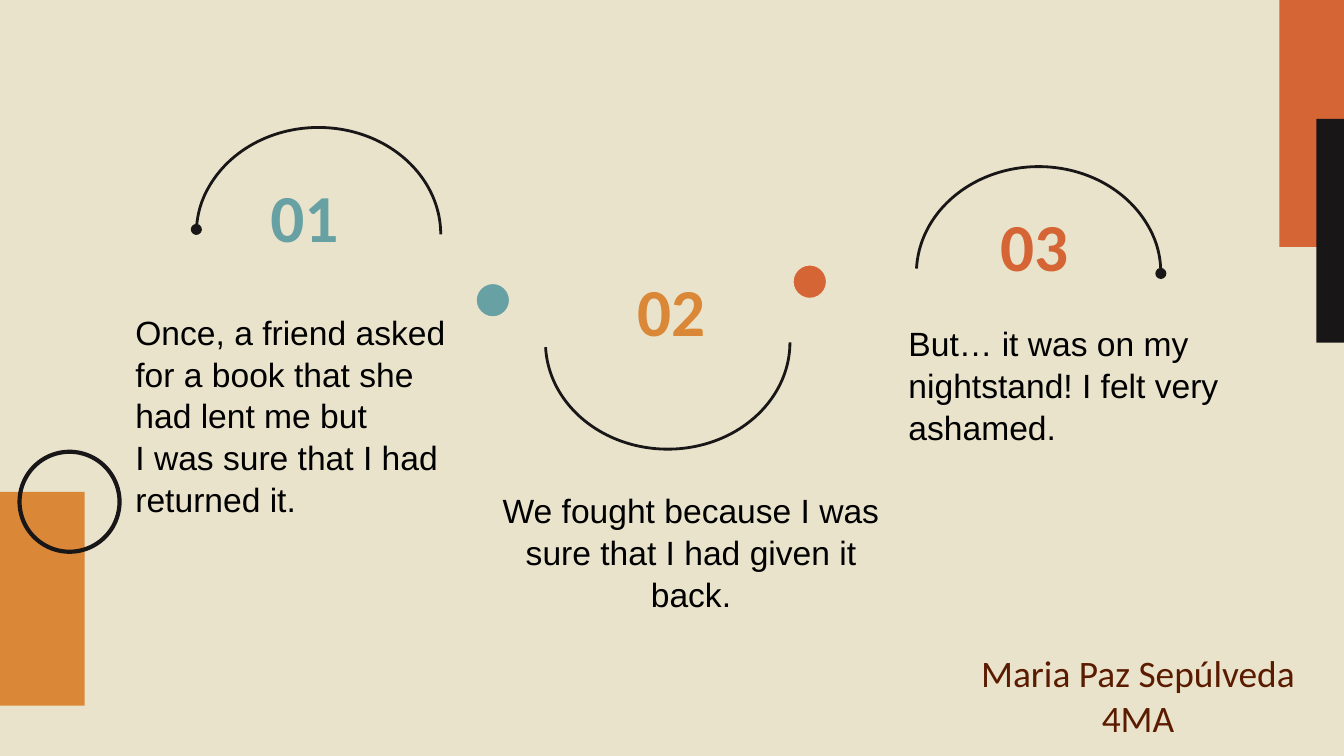
from dataclasses import dataclass

from pptx import Presentation
from pptx.dml.color import RGBColor as RGB
from pptx.enum.shapes import MSO_SHAPE as Kind
from pptx.enum.text import MSO_ANCHOR as Anchor, PP_ALIGN as Align
from pptx.oxml.ns import qn
from pptx.util import Cm, Pt
from lxml.etree import SubElement


@dataclass(frozen=True)
class Theme:
    sand: str = "E9E3CB"
    ink: str = "191617"
    teal: str = "68A1A4"
    amber: str = "DA8737"
    rust: str = "D56534"
    brown: str = "5A1B00"
    black: str = "000000"
    head: str = "Calibri"
    body: str = "Arial"
    num_pt: int = 36
    name_pt: int = 20
    body_pt: int = 18


T = Theme()


def rgb(code):
    return RGB.from_string(code)


def shape(slide, kind, box, fill=None, line=None, width=1.5):
    item = slide.shapes.add_shape(kind, *map(Cm, box))
    item.shadow.inherit = False
    if fill:
        item.fill.solid()
        item.fill.fore_color.rgb = rgb(fill)
    else:
        item.fill.background()
    if line:
        item.line.color.rgb = rgb(line)
        item.line.width = Pt(width)
    else:
        item.line.fill.background()
    return item


def text(slide, box, words, size, color, face=T.body, bold=False,
         align=Align.LEFT, anchor=Anchor.TOP, space=1.0):
    frame = slide.shapes.add_textbox(*map(Cm, box)).text_frame
    frame.word_wrap = True
    frame.vertical_anchor = anchor
    frame.margin_left = frame.margin_right = Cm(0.25)
    frame.margin_top = frame.margin_bottom = Cm(0.25)
    frame.text = words
    for para in frame.paragraphs:
        para.alignment = align
        para.line_spacing = space
        font = para.font
        font.name, font.size, font.bold = face, Pt(size), bold
        font.color.rgb = rgb(color)


def arc(slide, box, end=None, down=False):
    """Half ring; end is the tag of the line end that carries a dot."""
    item = shape(slide, Kind.ARC, box, line=T.ink)
    item.adjustments[0] = 109.38
    item.adjustments[1] = 0
    if down:
        item.rotation = 180
        item.element.spPr.get_or_add_xfrm().set("flipH", "1")
    if end:
        SubElement(item.line._get_or_add_ln(), qn(end), type="oval")


def corner(slide, x, y):
    """Two overlapping bars at the top right."""
    shape(slide, Kind.RECTANGLE, (x, y, 1.24, 4.67), T.rust)
    shape(slide, Kind.RECTANGLE, (x + 0.7, y + 2.25, 0.56, 4.23), T.ink)


def edge(slide, x, y):
    """Block and ring at the lower left."""
    shape(slide, Kind.RECTANGLE, (x, y, 2.29, 4.04), T.amber)
    shape(slide, Kind.OVAL, (x + 1.06, y - 0.76, 1.89, 1.89),
          line=T.ink, width=2.25)


def step(slide, x, y, num, color, shift, note, words,
         align=Align.LEFT, **ring):
    """Arc at x, y with its number and note placed from that corner."""
    arc(slide, (x, y, 4.62, 4.04), **ring)
    dx, dy = shift
    text(slide, (x + dx, y + dy, 2.97, 1.12), num, T.num_pt, color, T.head,
         True, Align.CENTER, Anchor.MIDDLE, 1.15)
    dx, dy, w, h = note
    text(slide, (x + dx, y + dy, w, h), words, T.body_pt, T.black,
         align=align, space=1.04)


def dot(slide, x, y, color):
    shape(slide, Kind.OVAL, (x, y, 0.69, 0.69), color, T.sand, 2.25)


def main():
    deck = Presentation()
    deck.slide_width, deck.slide_height = Cm(25.4), Cm(14.29)
    slide = deck.slides.add_slide(deck.slide_layouts[6])
    back = slide.background.fill
    back.solid()
    back.fore_color.rgb = rgb(T.sand)

    # Decoration
    corner(slide, 24.18, 0)
    edge(slide, -0.69, 9.3)

    # Story steps
    step(slide, 3.71, 2.41, "01", T.teal, (0.56, 0.99),
         (-1.4, 3.2, 6.65, 4.65),
         "Once, a friend asked for a book that she had lent me but\n"
         "I was sure that I had returned it.", end="a:headEnd")
    step(slide, 10.31, 4.45, "02", T.amber, (0.89, 0.73),
         (-1.06, 4.54, 7.62, 3.43),
         "We fought because I was sure that I had given it back.",
         Align.CENTER, down=True)
    step(slide, 17.32, 3.15, "03", T.rust, (0.74, 0.81),
         (-0.4, 2.67, 6.65, 2.49),
         "But… it was on my nightstand! I felt very ashamed.",
         end="a:tailEnd")

    # Dots between steps
    dot(slide, 8.97, 5.33, T.teal)
    dot(slide, 14.96, 4.98, T.rust)

    # Author
    text(slide, (17.32, 12.04, 8.38, 2.24), "Maria Paz Sepúlveda\v4MA",
         T.name_pt, T.brown, T.head, align=Align.CENTER)

    deck.save("out.pptx")


if __name__ == "__main__":
    main()
